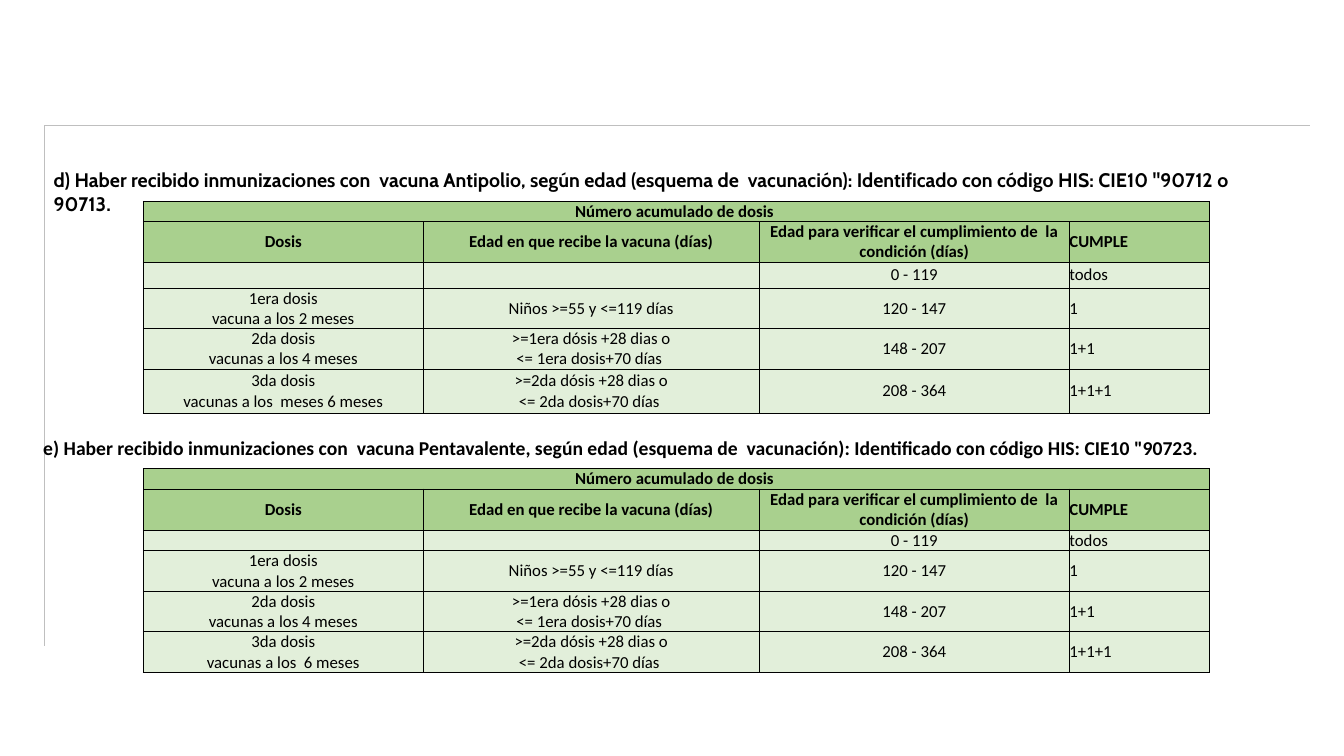
from dataclasses import dataclass

from lxml import etree
from pptx import Presentation
from pptx import util as u
from pptx.dml.color import RGBColor
from pptx.enum import shapes, text
from pptx.oxml.ns import qn


@dataclass(frozen=True)
class Theme:
    body_font: str = "Calibri"
    accent_font: str = "Cabin"
    ink: str = "000000"
    rule: str = "BFBFBF"
    header: str = "A9D08E"
    body: str = "E2EFDA"
    title_size: int = 14
    cell_size: int = 12
    line_width: float = 0.5


class VaccineSlide:
    """Draws rules, headings and dose tables on one slide in a shared style."""

    def __init__(self, prs, theme):
        self.theme = theme
        self.slide = prs.slides.add_slide(prs.slide_layouts[6])

    def rule(self, x1, y1, x2, y2):
        line = self.slide.shapes.add_connector(
            shapes.MSO_CONNECTOR.STRAIGHT, u.Cm(x1), u.Cm(y1), u.Cm(x2), u.Cm(y2))
        line.line.color.rgb = RGBColor.from_string(self.theme.rule)
        line.line.width = u.Pt(self.theme.line_width)
        etree.SubElement(line._element.spPr, qn("a:effectLst"))

    def style_runs(self, p, font, size, bold):
        for r in p.runs:
            r.font.name = font
            r.font.size = u.Pt(size)
            r.font.bold = bold
            r.font.color.rgb = RGBColor.from_string(self.theme.ink)

    def heading(self, words, left, top, width, font):
        box = self.slide.shapes.add_textbox(
            u.Cm(left), u.Cm(top), u.Cm(width), u.Cm(0.86))
        tf = box.text_frame
        tf.word_wrap = True
        tf.auto_size = text.MSO_AUTO_SIZE.SHAPE_TO_FIT_TEXT
        tf.text = words
        self.style_runs(tf.paragraphs[0], font, self.theme.title_size, True)

    def borders(self, cell):
        tcPr = cell._tc.get_or_add_tcPr()
        for side in ("lnL", "lnR", "lnT", "lnB"):
            ln = etree.SubElement(tcPr, qn(f"a:{side}"),
                                  w=str(u.Pt(self.theme.line_width)))
            fill = etree.SubElement(ln, qn("a:solidFill"))
            etree.SubElement(fill, qn("a:srgbClr"), val=self.theme.ink)

    def cell(self, cell, words, header, centred, middle):
        self.borders(cell)
        cell.fill.solid()
        cell.fill.fore_color.rgb = RGBColor.from_string(
            self.theme.header if header else self.theme.body)
        cell.margin_left = cell.margin_right = cell.margin_top = cell.margin_bottom = 0
        anchor = text.MSO_ANCHOR
        cell.vertical_anchor = anchor.MIDDLE if middle else anchor.TOP
        p = cell.text_frame.paragraphs[0]
        p.text = words
        p.alignment = text.PP_ALIGN.CENTER if centred else text.PP_ALIGN.LEFT
        self.style_runs(p, self.theme.body_font, self.theme.cell_size, header)
        size = str(self.theme.cell_size * 100)
        for br in p._p.findall(qn("a:br")):
            etree.SubElement(br, qn("a:rPr"), sz=size)
        etree.SubElement(p._p, qn("a:endParaRPr"), sz=size)

    def table(self, rows, left, top, widths, heights):
        frame = self.slide.shapes.add_table(
            len(rows), len(widths), u.Cm(left), u.Cm(top),
            u.Cm(sum(widths)), u.Cm(sum(heights)))
        table = frame.table
        table.first_row = table.horz_banding = False
        for column, width in zip(table.columns, widths):
            column.width = u.Cm(width)
        for row, height in zip(table.rows, heights):
            row.height = u.Cm(height)
        for i, row in enumerate(rows):
            for j, words in enumerate(row):
                self.cell(table.cell(i, j), words, header=i < 2,
                          centred=i == 0 or j < len(widths) - 1, middle=i > 0)
        table.cell(0, 0).merge(table.cell(0, len(widths) - 1))


def dose_rows(third_dose):
    return [
        ("Número acumulado de dosis ", "", "", ""),
        ("Dosis", "Edad en que recibe la vacuna (días)",
         "Edad para verificar el cumplimiento de  la condición (días)", "CUMPLE"),
        ("", "", "0 - 119", "todos"),
        ("1era dosis\nvacuna a los 2 meses", "Niños >=55 y <=119 días",
         "120 - 147", "1"),
        ("2da dosis\nvacunas a los 4 meses",
         ">=1era dósis +28 dias o\n<= 1era dosis+70 días ", "148 - 207", "1+1"),
        (f"3da dosis\n{third_dose}",
         ">=2da dósis +28 dias o\n<= 2da dosis+70 días ", "208 - 364", "1+1+1"),
    ]


def main():
    prs = Presentation()
    prs.slide_width, prs.slide_height = u.Cm(33.87), u.Cm(19.05)
    theme = Theme()
    s = VaccineSlide(prs, theme)
    s.rule(1.12, 3.15, 1.12, 16.28)
    s.rule(1.12, 3.15, 33.02, 3.15)

    table_left, widths = 3.61, (7.06, 8.46, 7.82, 3.53)
    s.heading("d) Haber recibido inmunizaciones con  vacuna Antipolio, según edad "
              "(esquema de  vacunación): Identificado con código HIS: "
              'CIE10 "90712 o 90713.', 1.1, 4.11, 31.67, theme.accent_font)
    s.table(dose_rows("vacunas a los  meses 6 meses"), table_left, 5.07, widths,
            (0.5, 1.02, 0.66, 1.02, 1.02, 1.12))
    s.heading("e) Haber recibido inmunizaciones con  vacuna Pentavalente, según edad "
              "(esquema de  vacunación): Identificado con código HIS: "
              'CIE10 "90723.', 0.84, 10.87, 30.48, theme.body_font)
    s.table(dose_rows("vacunas a los  6 meses"), table_left, 11.81, widths,
            (0.5, 1.05, 0.5, 1.02, 1.02, 1.02))
    prs.save("out.pptx")


if __name__ == "__main__":
    main()
